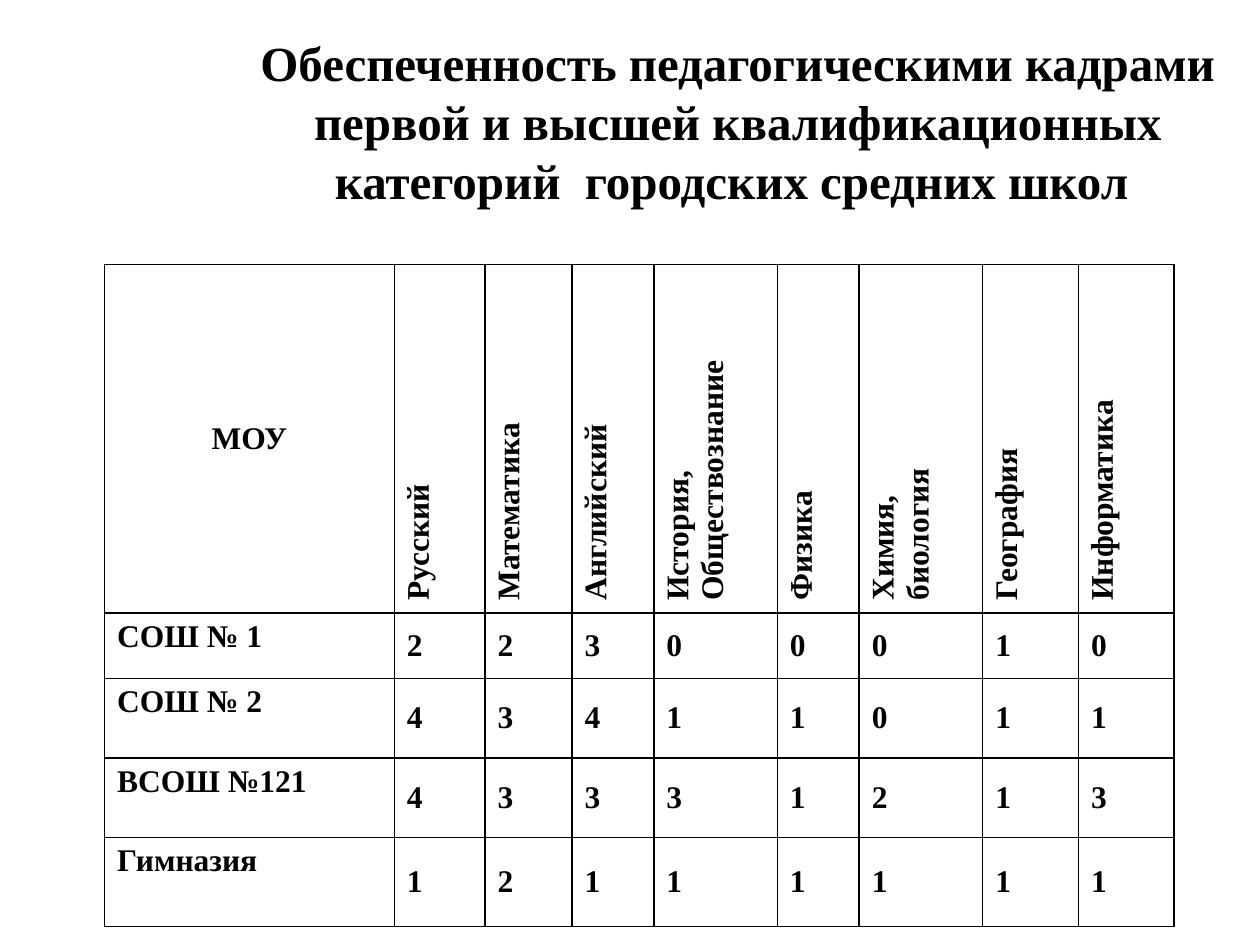
from dataclasses import dataclass

from lxml.etree import SubElement
from pptx import Presentation
from pptx.dml.color import RGBColor
from pptx.enum.text import MSO_ANCHOR, MSO_AUTO_SIZE, PP_ALIGN
from pptx.oxml.ns import qn
from pptx.util import Inches, Pt

BLACK = RGBColor(0x00, 0x00, 0x00)
FONT = "Times New Roman"
TITLE = ("Обеспеченность педагогическими кадрами первой и высшей "
         "квалификационных категорий  городских средних школ ")
COLUMN_WIDTHS = [2.3, 0.72, 0.69, 0.65, 0.98, 0.65, 0.98, 0.76, 0.76]
ROW_HEIGHTS = [2.16, 0.52, 0.63, 0.63, 0.71]
SUBJECTS = ["Русский", "Математика", "Английский", "История,\nОбществознание",
            "Физика", "Химия,\nбиология", "География", "Информатика"]


@dataclass
class School:
    name: str
    teachers: list[int]


SCHOOLS = [
    School("СОШ № 1", [2, 2, 3, 0, 0, 0, 1, 0]),
    School("СОШ № 2", [4, 3, 4, 1, 1, 0, 1, 1]),
    School("ВСОШ №121", [4, 3, 3, 3, 1, 2, 1, 3]),
    School("Гимназия", [1, 2, 1, 1, 1, 1, 1, 1]),
]


def add_span(para, text: str, size: float) -> None:
    span = para.add_run()
    span.text = text
    span.font.name = FONT
    span.font.size = Pt(size)
    span.font.bold = True
    span.font.color.rgb = BLACK


def add_borders(cell) -> None:
    properties = cell._tc.get_or_add_tcPr()
    for position, side in enumerate(("lnL", "lnR", "lnT", "lnB")):
        line = SubElement(properties, qn(f"a:{side}"), w=str(Pt(1)))
        fill = SubElement(line, qn("a:solidFill"))
        SubElement(fill, qn("a:srgbClr"), val=str(BLACK))
        properties.insert(position, line)  # borders come before the fill


def fill_cell(cell, text: str, align=PP_ALIGN.LEFT,
              anchor=MSO_ANCHOR.MIDDLE, vertical: bool = False) -> None:
    cell.fill.background()
    add_borders(cell)
    cell.vertical_anchor = anchor
    if vertical:
        cell._tc.get_or_add_tcPr().set("vert", "vert270")
    frame = cell.text_frame
    for index, line in enumerate(text.split("\n")):
        para = frame.add_paragraph() if index else frame.paragraphs[0]
        para.alignment = align
        properties = para._p.get_or_add_pPr()
        properties.set("marL", str(Inches(0.38)))
        properties.set("indent", str(Inches(-0.38)))
        add_span(para, line, 18)


def add_title(page) -> None:
    box = page.shapes.title
    box.left, box.top = Inches(1.95), Inches(0.3)
    box.width, box.height = Inches(7.81), Inches(1.32)
    frame = box.text_frame
    frame.word_wrap = True
    frame.auto_size = MSO_AUTO_SIZE.NONE
    frame.vertical_anchor = MSO_ANCHOR.MIDDLE
    para = frame.paragraphs[0]
    para.alignment = PP_ALIGN.CENTER
    add_span(para, TITLE, 28)


def add_staff_table(page) -> None:
    table = page.shapes.add_table(
        len(ROW_HEIGHTS), len(COLUMN_WIDTHS), Inches(0.83), Inches(2.1),
        Inches(sum(COLUMN_WIDTHS)), Inches(sum(ROW_HEIGHTS))).table
    table.first_row = False
    table.horz_banding = False
    for column, width in zip(table.columns, COLUMN_WIDTHS):
        column.width = Inches(width)
    for row, height in zip(table.rows, ROW_HEIGHTS):
        row.height = Inches(height)

    # Header row
    fill_cell(table.cell(0, 0), "МОУ", align=PP_ALIGN.CENTER)
    for column, subject in enumerate(SUBJECTS, 1):
        fill_cell(table.cell(0, column), subject, vertical=True)

    # One row per school
    for row, school in enumerate(SCHOOLS, 1):
        fill_cell(table.cell(row, 0), school.name, anchor=MSO_ANCHOR.TOP)
        for column, count in enumerate(school.teachers, 1):
            fill_cell(table.cell(row, column), str(count))


def main() -> None:
    deck = Presentation()
    deck.slide_width, deck.slide_height = Inches(10), Inches(7.5)
    page = deck.slides.add_slide(deck.slide_layouts[5])
    add_title(page)
    add_staff_table(page)
    deck.save("out.pptx")


if __name__ == "__main__":
    main()
